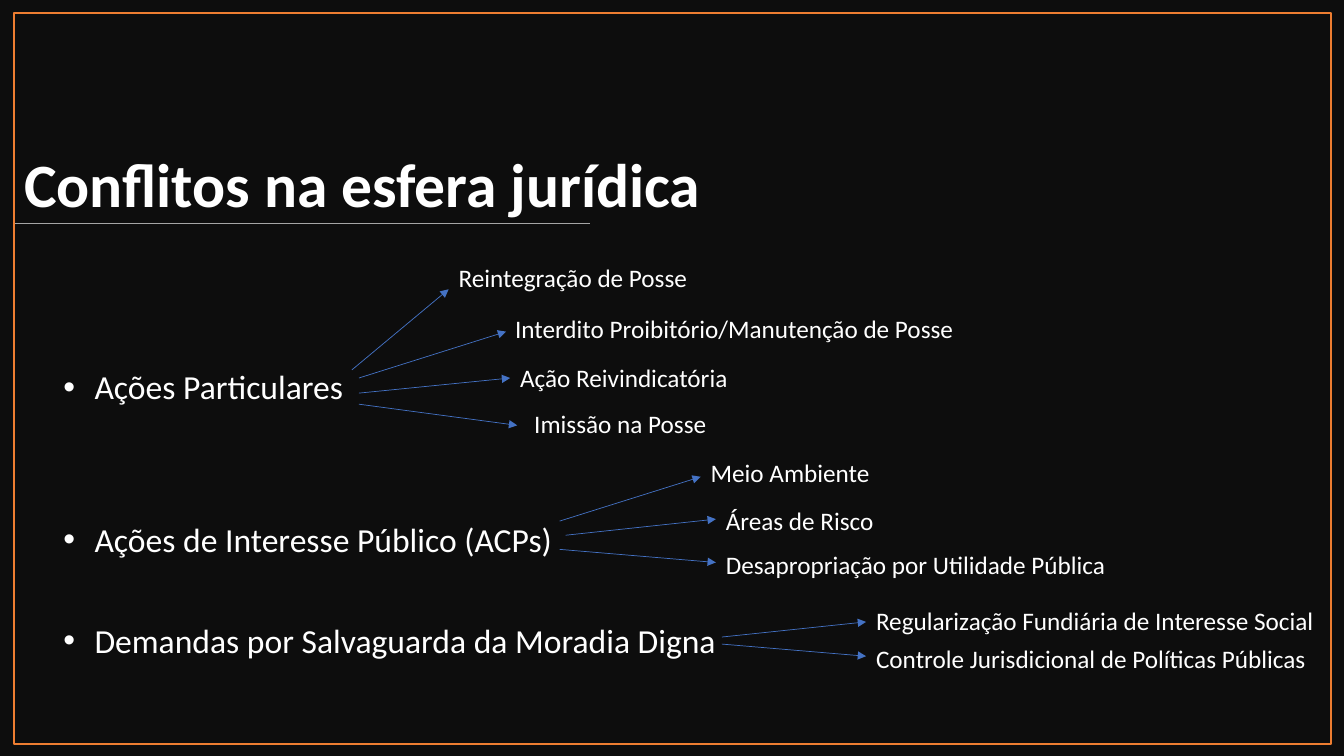
"""Build the slide on conflicts in the legal sphere, with three branching groups."""
from lxml.etree import SubElement
from pptx import Presentation
from pptx.dml.color import RGBColor
from pptx.enum.shapes import MSO_CONNECTOR as Connector, MSO_SHAPE as Shape
from pptx.enum.text import MSO_ANCHOR as Anchor, PP_ALIGN as Align
from pptx.oxml.ns import qn
from pptx.util import Inches, Pt

BLACK = RGBColor(0x0D, 0x0D, 0x0D)
WHITE = RGBColor(0xFF, 0xFF, 0xFF)
ORANGE = RGBColor(0xED, 0x7D, 0x31)
GRAY = RGBColor(0xA5, 0xA5, 0xA5)
BLUE = RGBColor(0x44, 0x72, 0xC4)

FONT = "Calibri"
COLUMNS, ROWS = 1333, 750
WIDTH, HEIGHT = Inches(13.33), Inches(7.5)

TITLE = "Conflitos na esfera jurídica"
TITLE_BOX = (14, 79, 725, 145)
UNDERLINE = ((585, 222), (14, 222))
FRAME_BOX = (14, 13, 1306, 725)
GROUPS_BOX = (28, 363, 1263, 345)

LINE_PITCH = 36.4
PARAGRAPH_GAP = 10
GROUPS = [
    ("Ações Particulares", 0),
    ("Ações de Interesse Público (ACPs)", 2),
    ("Demandas por Salvaguarda da Moradia Digna", 1),
]

BRANCH_HEIGHT = 71
BRANCHES = [
    ("Reintegração de Posse", (445, 255), 249, (349, 367), (445, 287)),
    ("Interdito Proibitório/Manutenção de Posse", (501, 306), 550, (356, 375), (502, 329)),
    ("Ação Reivindicatória", (506, 354), 249, (356, 390), (506, 375)),
    ("Imissão na Posse", (520, 400), 249, (356, 401), (513, 422)),
    ("Meio Ambiente", (695, 449), 249, (555, 517), (695, 473)),
    ("Áreas de Risco", (710, 496), 249, (561, 531), (710, 515)),
    ("Desapropriação por Utilidade Pública", (710, 540), 411, (555, 545), (710, 558)),
    ("Regularização Fundiária de Interesse Social", (859, 596), 461, (716, 632), (859, 617)),
    ("Controle Jurisdicional de Políticas Públicas", (859, 633), 461, (716, 639), (859, 651)),
]


def place(*cells):
    """Turn alternating column and row counts into slide lengths."""
    units = (WIDTH / COLUMNS, HEIGHT / ROWS)
    return [round(cell * units[index % 2]) for index, cell in enumerate(cells)]


def apply(target, values):
    """Set each named attribute on the target."""
    for name, value in values.items():
        setattr(target, name, value)


def add_rectangle(slide, box, fill=None, line=None):
    """Add a rectangle with an optional fill and outline."""
    shape = slide.shapes.add_shape(Shape.RECTANGLE, *place(*box))
    shape.shadow.inherit = False
    for part, color in ((shape.fill, fill), (shape.line.fill, line)):
        if color is None:
            part.background()
        else:
            part.solid()
            part.fore_color.rgb = color
    if line is not None:
        shape.line.width = Pt(1)


def add_line(slide, start, end, color, width, arrow=False):
    """Add a straight line, with an arrowhead at its end if asked."""
    line = slide.shapes.add_connector(Connector.STRAIGHT, *place(*start, *end))
    line.line.color.rgb = color
    line.line.width = Pt(width)
    if arrow:
        SubElement(line.line._get_or_add_ln(), qn("a:tailEnd"), type="triangle")
    SubElement(line._element.spPr, qn("a:effectLst"))


def add_text(slide, box, lines, size, bold=False, anchor=Anchor.TOP):
    """Add a wrapped text box and return its paragraphs."""
    frame = slide.shapes.add_textbox(*place(*box)).text_frame
    apply(frame, {"word_wrap": True, "vertical_anchor": anchor, "text": "\n".join(lines)})
    for paragraph in frame.paragraphs:
        font = paragraph.runs[0].font
        apply(font, {"name": FONT, "size": Pt(size), "bold": bold})
        font.color.rgb = WHITE
    return frame.paragraphs


def add_groups(slide):
    """Add the bulleted groups, spaced by whole lines."""
    paragraphs = add_text(slide, GROUPS_BOX, [text for text, _ in GROUPS], 24)
    for paragraph, (_, skipped) in zip(paragraphs, GROUPS):
        gap = PARAGRAPH_GAP + skipped * LINE_PITCH if skipped else 0
        apply(paragraph, {"alignment": Align.JUSTIFY, "line_spacing": 0.9, "space_before": Pt(gap)})
        properties = paragraph._p.get_or_add_pPr()
        properties.set("marL", str(Inches(0.56)))
        properties.set("indent", str(Inches(-0.31)))
        SubElement(properties, qn("a:buFont"), typeface="Arial")
        SubElement(properties, qn("a:buChar"), char="•")


def main():
    """Assemble and save the slide."""
    presentation = Presentation()
    apply(presentation, {"slide_width": WIDTH, "slide_height": HEIGHT})
    slide = presentation.slides.add_slide(presentation.slide_layouts[6])
    add_rectangle(slide, (0, 0, COLUMNS, ROWS), fill=BLACK)
    title = add_text(slide, TITLE_BOX, [TITLE], 44, bold=True, anchor=Anchor.BOTTOM)[0]
    title.line_spacing = 0.9
    add_line(slide, *UNDERLINE, GRAY, 0.5)
    add_groups(slide)
    add_rectangle(slide, FRAME_BOX, line=ORANGE)
    for text, corner, width, start, end in BRANCHES:
        add_line(slide, start, end, BLUE, 0.5, arrow=True)
        add_text(slide, (*corner, width, BRANCH_HEIGHT), [text], 18)
    presentation.save("out.pptx")


if __name__ == "__main__":
    main()
